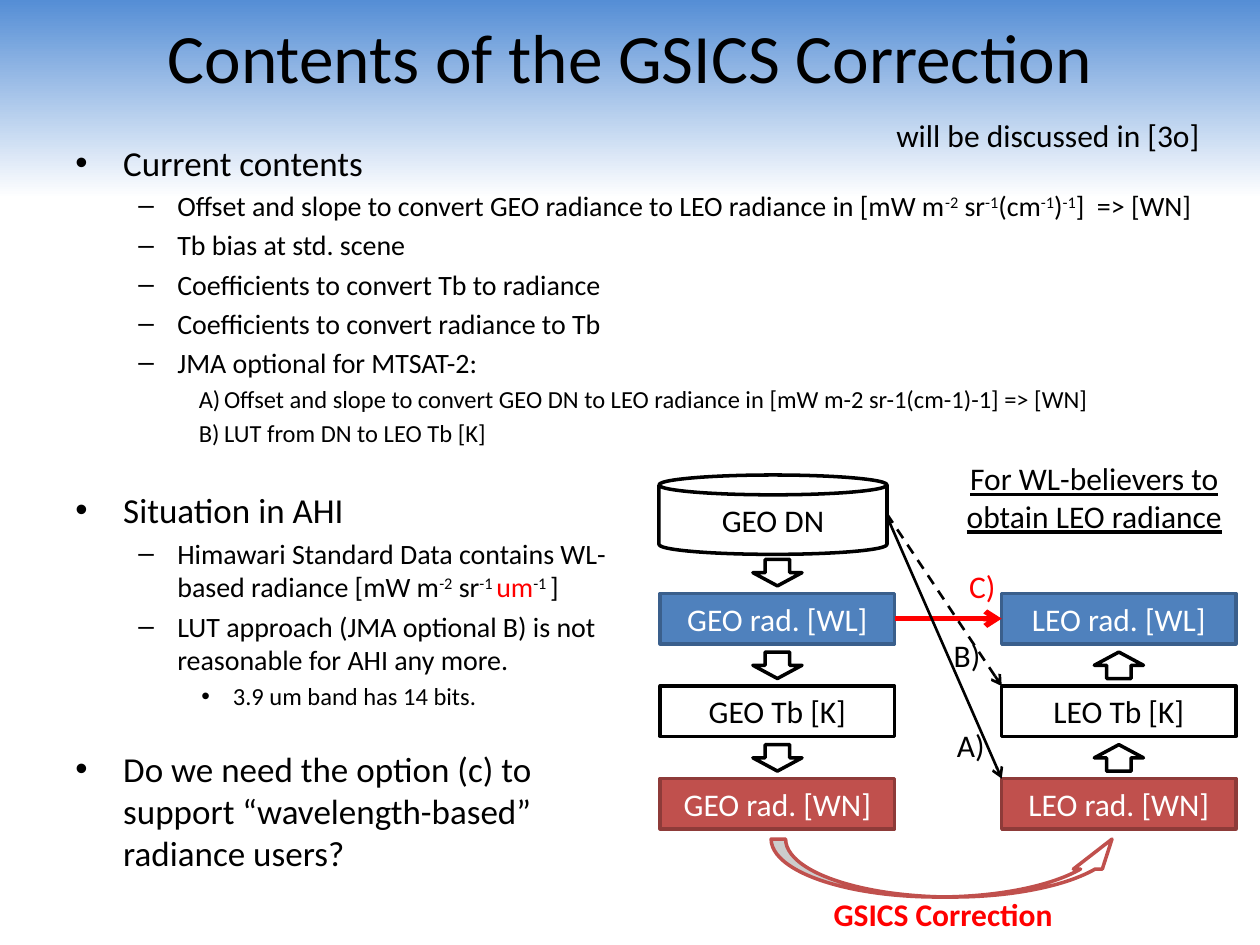
from lxml.etree import SubElement
from pptx import Presentation
from pptx.dml.color import RGBColor
from pptx.enum.dml import MSO_LINE
from pptx.enum.shapes import MSO_CONNECTOR as Link, MSO_SHAPE as Shape
from pptx.enum.text import MSO_ANCHOR as Anchor, PP_ALIGN as Align
from pptx.oxml.ns import qn
from pptx.util import Inches, Pt

BLACK = RGBColor(0x00, 0x00, 0x00)
WHITE = RGBColor(0xFF, 0xFF, 0xFF)
RED = RGBColor(0xFF, 0x00, 0x00)
SKY = RGBColor(0x55, 0x8E, 0xD5)
BLUE, NAVY = RGBColor(0x4F, 0x81, 0xBD), RGBColor(0x3A, 0x5F, 0x8C)
BRICK, RUST = RGBColor(0xC0, 0x50, 0x4D), RGBColor(0x8E, 0x3B, 0x39)

# Flow grid, in inches
COLS = (5.24, 7.95)
TOP, STEP = 4.71, 0.735
BOX_W, BOX_H = 1.86, 0.4
ARROW_W, ARROW_H, GAP = 0.39, 0.21, 0.27

ROWS = (
    ("rad. [WL]", BLUE, NAVY, WHITE),
    ("Tb [K]", WHITE, BLACK, BLACK),
    ("rad. [WN]", BRICK, RUST, WHITE),
)

# Kind: left margin, hang, size, bullet
LEVELS = {
    "head": (0.38, 0.38, 20, "•"),
    "item": (0.81, 0.31, 16, "–"),
    "letter": (1.18, 0.2, 14, None),
    "dot": (1.25, 0.25, 14, "•"),
}

# Superscripts stand between carets
CURRENT = (
    ("head", "Current contents"),
    ("item", "Offset and slope to convert GEO radiance to LEO radiance in "
             "[mW m^-2^ sr^-1^(cm^-1^)^-1^]  => [WN]"),
    ("item", "Tb bias at std. scene"),
    ("item", "Coefficients to convert Tb to radiance"),
    ("item", "Coefficients to convert radiance to Tb"),
    ("item", "JMA optional for MTSAT-2:"),
    ("letter", "Offset and slope to convert GEO DN to LEO radiance in "
               "[mW m-2 sr-1(cm-1)-1] => [WN]"),
    ("letter", "LUT from DN to LEO Tb [K]"),
)
AHI = (
    ("head", "Situation in AHI"),
    ("item", "Himawari Standard Data contains WL-based radiance "
             "[mW m^-2^ sr^-1 ^um^-1 ^]"),
    ("item", "LUT approach (JMA optional B) is not reasonable for AHI any more."),
    ("dot", "3.9 um band has 14 bits."),
    ("head", "Do we need the option (c) to support “wavelength-based” "
             "radiance users?"),
)


def row_y(row):
    return TOP + row * STEP


def write(para, text, color=BLACK, **form):
    run = para.add_run()
    run.text = text
    form = {"name": "Calibri", "size": Pt(18), **form}
    for key, value in form.items():
        setattr(run.font, key, value)
    run.font.color.rgb = color
    return run


def fill_text(shape, text, color, align=Align.CENTER, **form):
    frame = shape.text_frame
    frame.word_wrap = True
    frame.vertical_anchor = Anchor.MIDDLE
    para = frame.paragraphs[0]
    para.alignment = align
    write(para, text, color, **form)


def add_label(slide, box, text, color=BLACK, **form):
    label = slide.shapes.add_textbox(*map(Inches, box))
    fill_text(label, text, color, **form)


def add_shape(slide, kind, box, fill=WHITE, line=BLACK):
    shape = slide.shapes.add_shape(kind, *map(Inches, box))
    shape.shadow.inherit = False
    shape.fill.solid()
    shape.fill.fore_color.rgb = fill
    if line is None:
        shape.line.fill.background()
    else:
        shape.line.color.rgb = line
        shape.line.width = Pt(2)
    return shape


def add_link(slide, start, end, color=BLACK, width=1.5, dash=None):
    """Draw a straight line with an open arrowhead at its end."""
    link = slide.shapes.add_connector(
        Link.STRAIGHT, *map(Inches, (*start, *end)))
    link.line.color.rgb = color
    link.line.width = Pt(width)
    if dash:
        link.line.dash_style = dash
    props = link._element.spPr
    SubElement(props.find(qn("a:ln")), qn("a:tailEnd"), type="arrow")
    SubElement(props, qn("a:effectLst"))
    return link


def set_bullet(para, left, hang, mark):
    """Give a hanging bullet, or letters A), B) when there is no mark."""
    props = para._p.get_or_add_pPr()
    props.set("marL", str(Inches(left)))
    props.set("indent", str(-Inches(hang)))
    if mark:
        SubElement(props, qn("a:buFont"), typeface="Arial")
        SubElement(props, qn("a:buChar"), char=mark)
    else:
        SubElement(props, qn("a:buFont"), typeface="+mj-lt")
        SubElement(props, qn("a:buAutoNum"), type="alphaUcParenR")


def add_list(slide, box, items):
    frame = slide.shapes.add_textbox(*map(Inches, box)).text_frame
    frame.word_wrap = True
    for pos, (kind, text) in enumerate(items):
        para = frame.add_paragraph() if pos else frame.paragraphs[0]
        left, hang, size, mark = LEVELS[kind]
        extra = 17 if pos and kind == "head" else 0
        para.space_before = Pt(size * 0.2 + extra)
        set_bullet(para, left, hang, mark)
        for part, piece in enumerate(text.split("^")):
            color = RED if piece == "um" else BLACK
            run = write(para, piece, color, size=Pt(size))
            if part % 2:
                run._r.get_or_add_rPr().set("baseline", "30000")


def add_arrow(slide, kind, col, row):
    """Put a block arrow in the gap above a row."""
    left = COLS[col] + (BOX_W - ARROW_W) / 2
    add_shape(slide, kind, (left, row_y(row) - GAP, ARROW_W, ARROW_H))


def add_flow(slide):
    can = add_shape(slide, Shape.CAN, (5.23, 3.77, 1.81, 0.63))
    fill_text(can, "GEO DN", BLACK)
    boxes = {}
    for col, name in enumerate(("GEO", "LEO")):
        for row, (text, fill, line, ink) in enumerate(ROWS):
            box = add_shape(slide, Shape.RECTANGLE,
                            (COLS[col], row_y(row), BOX_W, BOX_H), fill, line)
            fill_text(box, f"{name} {text}", ink)
            boxes[col, row] = box
    for row in range(3):
        add_arrow(slide, Shape.DOWN_ARROW, 0, row)
    for row in (1, 2):
        add_arrow(slide, Shape.UP_ARROW, 1, row)

    swoop = add_shape(slide, Shape.CURVED_UP_ARROW,
                      (6.12, 6.66, 2.82, 0.46), line=BRICK)
    swoop.adjustments[2] = 0.518
    mid = row_y(0) + BOX_H / 2
    link = add_link(slide, (COLS[0] + BOX_W, mid), (COLS[1], mid), RED, 3)
    link.begin_connect(boxes[0, 0], 3)
    link.end_connect(boxes[1, 0], 1)
    add_link(slide, (7.04, 4.1), (COLS[1], row_y(2)))
    note = add_shape(slide, Shape.RECTANGLE, (7.37, 3.59, 2.63, 0.71), line=None)
    fill_text(note, "For WL-believers to obtain LEO radiance", BLACK,
              underline=True)
    add_link(slide, (7.04, 4.08), (COLS[1], row_y(1)), dash=MSO_LINE.DASH)


def paint_back(slide):
    fill = slide.background.fill
    fill.gradient()
    fill.gradient_angle = 90
    for stop, (place, color) in zip(fill.gradient_stops,
                                    ((0.79, WHITE), (1, SKY))):
        stop.position = place
        stop.color.rgb = color


def main():
    deck = Presentation()
    deck.slide_width, deck.slide_height = Inches(10), Inches(7.5)
    slide = deck.slides.add_slide(deck.slide_layouts[6])
    paint_back(slide)
    add_label(slide, (0.5, 0.05, 9, 0.79), "Contents of the GSICS Correction",
              size=Pt(39.6))
    add_list(slide, (0.5, 1.07, 9.3, 2.68), CURRENT)
    add_list(slide, (0.5, 3.83, 4.5, 3.42), AHI)
    add_flow(slide)
    add_label(slide, (6.34, 7.05, 2.29, 0.4), "GSICS Correction", RED, bold=True)
    for left, top, text, color in ((7.43, 5.71, "A)", BLACK),
                                   (7.4, 5, "B)", BLACK),
                                   (7.52, 4.45, "C)", RED)):
        add_label(slide, (left, top, 0.55, 0.4), text, color)
    add_label(slide, (6.42, 0.87, 3.2, 0.4), "will be discussed in [3o]",
              align=Align.RIGHT)
    deck.save("out.pptx")


if __name__ == "__main__":
    main()
